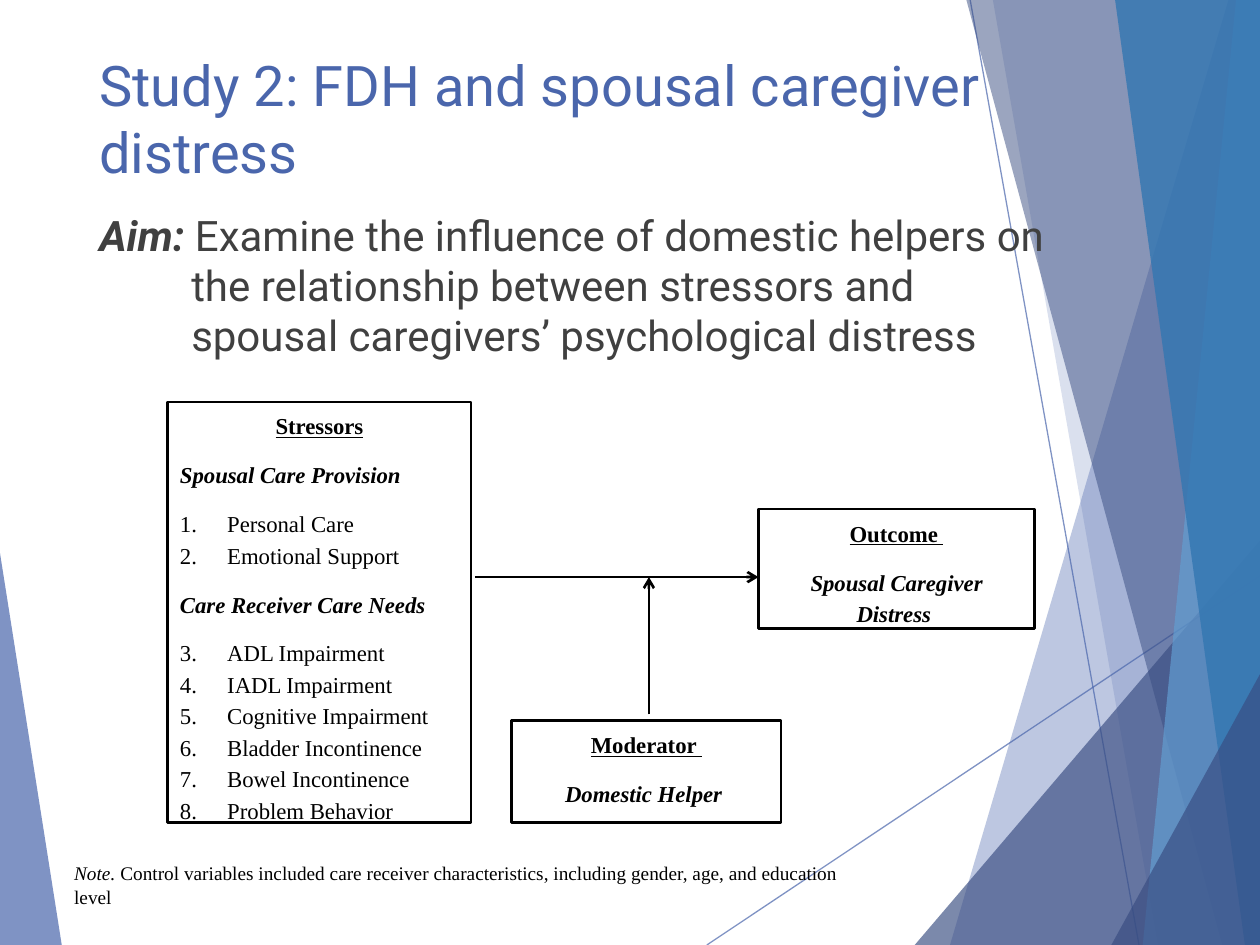
from dataclasses import dataclass
from lxml import etree
from pptx import Presentation, util as u
from pptx.dml.color import RGBColor
from pptx.enum import shapes, text
from pptx.oxml import ns

COLS, ROWS = 100, 75  # grid of the whole slide
MID = text.PP_ALIGN.CENTER


@dataclass
class Theme:
    blue: str = "4A66AC"
    navy: str = "384C81"
    sky: str = "629DD1"
    deep: str = "3477B2"
    gray: str = "404040"
    black: str = "000000"
    white: str = "FFFFFF"
    sans: str = "Roboto"
    serif: str = "Times New Roman"
    title: float = 32
    body: float = 24
    label: float = 13
    note: float = 11


def sub(node, tag, **attrs):
    return etree.SubElement(node, ns.qn(tag), attrs)


def fade(shape, share):
    """Make the colours of a shape show at the given percentage."""
    for tone in shape._element.spPr.iter(ns.qn("a:srgbClr")):
        sub(tone, "a:alpha", val=str(share * 1000))


def indent(par, shift):
    """Hang the first line of a paragraph to the left of the others."""
    props = par._p.get_or_add_pPr()
    props.set("marL", str(shift))
    props.set("indent", str(-shift))
    return props


def say(par, words, size, face, tone, bold=False, slant=False, under=False):
    run = par.add_run()
    run.text = words
    font = run.font
    font.size, font.name = u.Pt(size), face
    font.bold, font.italic, font.underline = bold, slant, under
    font.color.rgb = RGBColor.from_string(tone)


class Deck:
    def __init__(self, theme):
        self.theme = theme
        self.show = Presentation()
        self.show.slide_width, self.show.slide_height = u.Inches(10), u.Inches(7.5)
        self.slide = self.show.slides.add_slide(self.show.slide_layouts[6])
        self.tree = self.slide.shapes

    def spot(self, *nums):
        """Turn column, row pairs into slide lengths."""
        size = self.show.slide_width / COLS, self.show.slide_height / ROWS
        return [round(n * size[i % 2]) for i, n in enumerate(nums)]

    def facet(self, points, tone, share):
        first, *rest = [tuple(self.spot(*p)) for p in points]
        draft = self.tree.build_freeform(*first)
        draft.add_line_segments(rest, close=True)
        shape = draft.convert_to_shape()
        shape.shadow.inherit = False
        shape.fill.solid()
        shape.fill.fore_color.rgb = RGBColor.from_string(tone)
        shape.line.fill.background()
        fade(shape, share)

    def line(self, ends, tone, width, share=None, arrow=False):
        link = self.tree.add_connector(shapes.MSO_CONNECTOR.STRAIGHT, *self.spot(*ends))
        link.line.width = u.Pt(width)
        link.line.color.rgb = RGBColor.from_string(tone)
        if share:
            fade(link, share)
        props = link._element.spPr
        if arrow:
            sub(props.find(ns.qn("a:ln")), "a:tailEnd", type="arrow")
        sub(props, "a:effectLst")

    def text(self, area, runs, wrap=True, hang=0):
        """Place one paragraph of (words, format) runs."""
        frame = self.tree.add_textbox(*self.spot(*area)).text_frame
        frame.word_wrap = wrap
        par = frame.paragraphs[0]
        if hang:
            indent(par, *self.spot(hang))
        for words, form in runs:
            say(par, words, **form)

    def box(self, area, rows):
        """Place a framed box of (words, kind, number, gap) rows."""
        look = self.theme
        shape = self.tree.add_shape(shapes.MSO_SHAPE.RECTANGLE, *self.spot(*area))
        shape.shadow.inherit = False
        shape.fill.solid()
        shape.fill.fore_color.rgb = RGBColor.from_string(look.white)
        shape.line.color.rgb = RGBColor.from_string(look.black)
        shape.line.width = u.Pt(1.5)
        frame = shape.text_frame
        frame.word_wrap, frame.vertical_anchor = True, text.MSO_ANCHOR.TOP
        for i, (words, kind, start, gap) in enumerate(rows):
            par = frame.add_paragraph() if i else frame.paragraphs[0]
            par.alignment = MID if kind in ("head", "mid") else text.PP_ALIGN.LEFT
            par.line_spacing, par.space_after = 1.15, u.Pt(gap)
            if kind == "item":
                props = indent(par, *self.spot(3.75))
                sub(props, "a:buFont", typeface="+mj-lt")
                sub(props, "a:buAutoNum", type="arabicPeriod", startAt=str(start))
            say(par, words, look.label, look.serif, look.black, bold=kind != "item",
                slant=kind in ("mid", "left"), under=kind == "head")


def items(start, *names):
    """Numbered rows, with a gap after the last."""
    return [(name, "item", start, 10 if name == names[-1] else 0) for name in names]


def backdrop(deck):
    look = deck.theme
    deck.facet([(0, 43.9), (4.9, 75), (0, 75)], look.blue, 70)
    for ends in ((56.1, 75, 100, 45.7), (77, 0, 90.4, 75)):
        deck.line(ends, look.blue, 0.75, share=70)
    # each facet runs from its top and foot corners to the right edge
    for top, foot, tone, share in (
        ((97.5, 0), (75.4, 75), look.blue, 36),
        ((78.8, 0), (91.9, 75), look.blue, 20),
        ((100, 42.9), (72.6, 75), look.navy, 66),
        ((76.7, 0), (97, 75), look.navy, 50),
        ((98.1, 0), (90.7, 75), look.sky, 70),
        ((88.5, 0), (98.8, 75), look.deep, 82),
        ((100, 53.5), (88.2, 75), look.navy, 66),
    ):
        deck.facet([top, (COLS, top[1]), (COLS, ROWS), foot], tone, share)


def main():
    look = Theme()
    deck = Deck(look)
    backdrop(deck)

    title = dict(size=look.title, face=look.sans, tone=look.blue)
    body = dict(size=look.body, face=look.sans, tone=look.gray)
    note = dict(size=look.note, face=look.serif, tone=look.black)
    deck.text((6.9, 3.5, 73.3, 14.3), [("Study 2: FDH and spousal caregiver distress", title)])
    deck.text((6.9, 16.1, 77.3, 47.4), [
        ("Aim: ", dict(body, bold=True, slant=True)),
        ("Examine the influence of domestic helpers on the relationship between "
         "stressors and spousal caregivers’ psychological distress", body),
    ], hang=7.3)

    deck.box((13.3, 31.9, 24.1, 33.4), [
        ("Stressors", "head", 0, 10),
        ("Spousal Care Provision", "left", 0, 10),
        *items(1, "Personal Care", "Emotional Support"),
        ("Care Receiver Care Needs", "left", 0, 10),
        *items(3, "ADL Impairment", "IADL Impairment", "Cognitive Impairment",
               "Bladder Incontinence", "Bowel Incontinence", "Problem Behavior"),
    ])
    deck.box((60.2, 40.4, 21.9, 9.5), [
        ("Outcome ", "head", 0, 10), ("Spousal Caregiver Distress ", "mid", 0, 0)])
    deck.box((40.6, 57.2, 21.4, 8.1), [
        ("Moderator ", "head", 0, 10), ("Domestic Helper ", "mid", 0, 10)])
    for ends in ((37.7, 45.8, 60.2, 45.8), (51.5, 56.7, 51.5, 45.8)):
        deck.line(ends, look.black, 1.5, arrow=True)

    deck.text((4.9, 67.9, 64.2, 3.4), [
        ("Note.", dict(note, slant=True)),
        (" Control variables included care receiver characteristics, "
         "including gender, age, and education level", note),
    ], wrap=False)
    deck.show.save("out.pptx")


if __name__ == "__main__":
    main()
